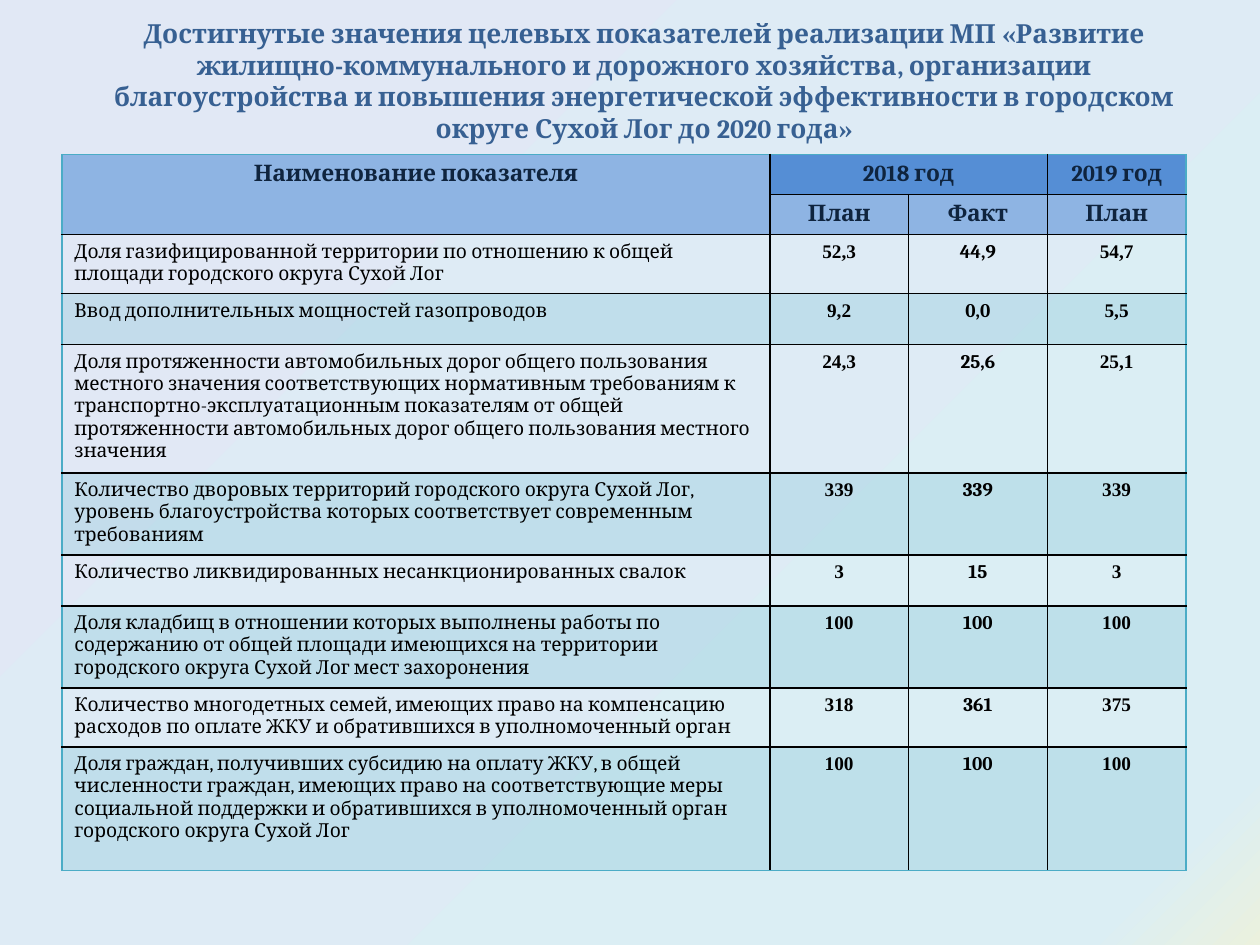
from copy import deepcopy
from lxml.etree import SubElement
from pptx import Presentation
from pptx.dml.color import RGBColor
from pptx.enum.text import MSO_ANCHOR, PP_ALIGN
from pptx.oxml.ns import qn
from pptx.util import Pt

TITLE = "Достигнутые значения целевых показателей реализации МП «Развитие жилищно-коммунального и дорожного хозяйства, организации благоустройства и повышения энергетической эффективности в городском округе Сухой Лог до 2020 года»"
HEAD = [
    ("Наименование показателя", "2018 год", "", "2019 год"),
    ("", "План", "Факт", "План"),
]
DATA = [
    ("Доля газифицированной территории по отношению к общей площади городского округа Сухой Лог",
     "52,3", "44,9", "54,7"),
    ("Ввод дополнительных мощностей газопроводов", "9,2", "0,0", "5,5"),
    ("Доля протяженности автомобильных дорог общего пользования местного значения соответствующих нормативным требованиям к транспортно-эксплуатационным показателям от общей протяженности автомобильных дорог общего пользования местного значения",
     "24,3", "25,6", "25,1"),
    ("Количество дворовых территорий городского округа Сухой Лог, уровень благоустройства которых соответствует современным требованиям",
     "339", "339", "339"),
    ("Количество ликвидированных несанкционированных свалок", "3", "15", "3"),
    ("Доля кладбищ в отношении которых выполнены работы по содержанию от общей площади имеющихся на территории городского округа Сухой Лог мест захоронения",
     "100", "100", "100"),
    ("Количество многодетных семей, имеющих право на компенсацию расходов по оплате ЖКУ и обратившихся в уполномоченный орган",
     "318", "361", "375"),
    ("Доля граждан, получивших субсидию на оплату ЖКУ, в общей численности граждан, имеющих право на соответствующие меры социальной поддержки и обратившихся в уполномоченный орган городского округа Сухой Лог",
     "100", "100", "100"),
]
ROWS = HEAD + DATA
COLS = [404.6, 79.3, 79.3, 79.3]
HIGH = [22.8, 22.8, 32.6, 29.2, 70.8, 45.4, 29.2, 45.4, 32.8, 70.6]
FONTS = ["Cambria", "Times New Roman", "Cambria", "Times New Roman"]
STOPS = [(0, "EBF1DE"), (0.08, "DBEEF4"), (1, "E1E8F5")]
TEAL, BLACK = "4BACC6", "000000"


def rgb(code):
    return RGBColor.from_string(code)


def write(frame, text, size, font, color, bold, align):
    frame.text = text
    para = frame.paragraphs[0]
    para.alignment = align
    for run in para.runs:
        run.font.size = Pt(size)
        run.font.name = font
        run.font.bold = bold
        run.font.color.rgb = rgb(color)


def paint(cell, color, alpha=None):
    cell.fill.solid()
    cell.fill.fore_color.rgb = rgb(color)
    if alpha:
        tint = cell._tc.tcPr.find(".//" + qn("a:srgbClr"))
        SubElement(tint, qn("a:alpha")).set("val", str(alpha * 1000))


def edge(cell, row, col):
    outer = [col == 0, col == len(COLS) - 1, row == 0, row == len(ROWS) - 1]
    props = cell._tc.get_or_add_tcPr()
    for spot, (side, rim) in enumerate(zip("LRTB", outer)):
        line = props.makeelement(qn("a:ln" + side), {"w": str(Pt(1))})
        fill = SubElement(line, qn("a:solidFill"))
        SubElement(fill, qn("a:srgbClr")).set("val", TEAL if rim else BLACK)
        props.insert(spot, line)


def shade(slide):
    fill = slide.background.fill
    fill.gradient()
    fill.gradient_angle = 135
    group = slide.element.find(".//" + qn("a:gsLst"))
    group.append(deepcopy(group[0]))
    for stop, (place, color) in zip(fill.gradient_stops, STOPS):
        stop.position = place
        stop.color.rgb = rgb(color)


def main():
    deck = Presentation()
    deck.slide_width, deck.slide_height = Pt(720), Pt(540)
    slide = deck.slides.add_slide(deck.slide_layouts[6])
    shade(slide)

    title = slide.shapes.add_textbox(Pt(36.7), Pt(9.4), Pt(663), Pt(73.4)).text_frame
    title.word_wrap = True
    title.vertical_anchor = MSO_ANCHOR.MIDDLE
    write(title, TITLE, 15, "Cambria", "376092", True, PP_ALIGN.CENTER)

    table = slide.shapes.add_table(len(ROWS), len(COLS), Pt(35.3), Pt(88.4),
                                   Pt(sum(COLS)), Pt(sum(HIGH))).table
    table.first_row = table.horz_banding = False
    for col, width in zip(table.columns, COLS):
        col.width = Pt(width)
    for row, high in zip(table.rows, HIGH):
        row.height = Pt(high)
    for r, row in enumerate(ROWS):
        for c, text in enumerate(row):
            cell = table.cell(r, c)
            top = r < len(HEAD)
            align = PP_ALIGN.CENTER if top or c else PP_ALIGN.LEFT
            if top:
                write(cell.text_frame, text, 13, "Cambria", "0F243E", True, align)
                paint(cell, "558ED5" if r == 0 and c else "8EB4E3")
            else:
                write(cell.text_frame, text, 11, FONTS[c], BLACK, c > 0, align)
                if r % 2:
                    paint(cell, TEAL, 20)
                else:
                    cell.fill.background()
            edge(cell, r, c)
    table.cell(0, 0).merge(table.cell(1, 0))
    table.cell(0, 1).merge(table.cell(0, 2))
    deck.save("out.pptx")


if __name__ == "__main__":
    main()
